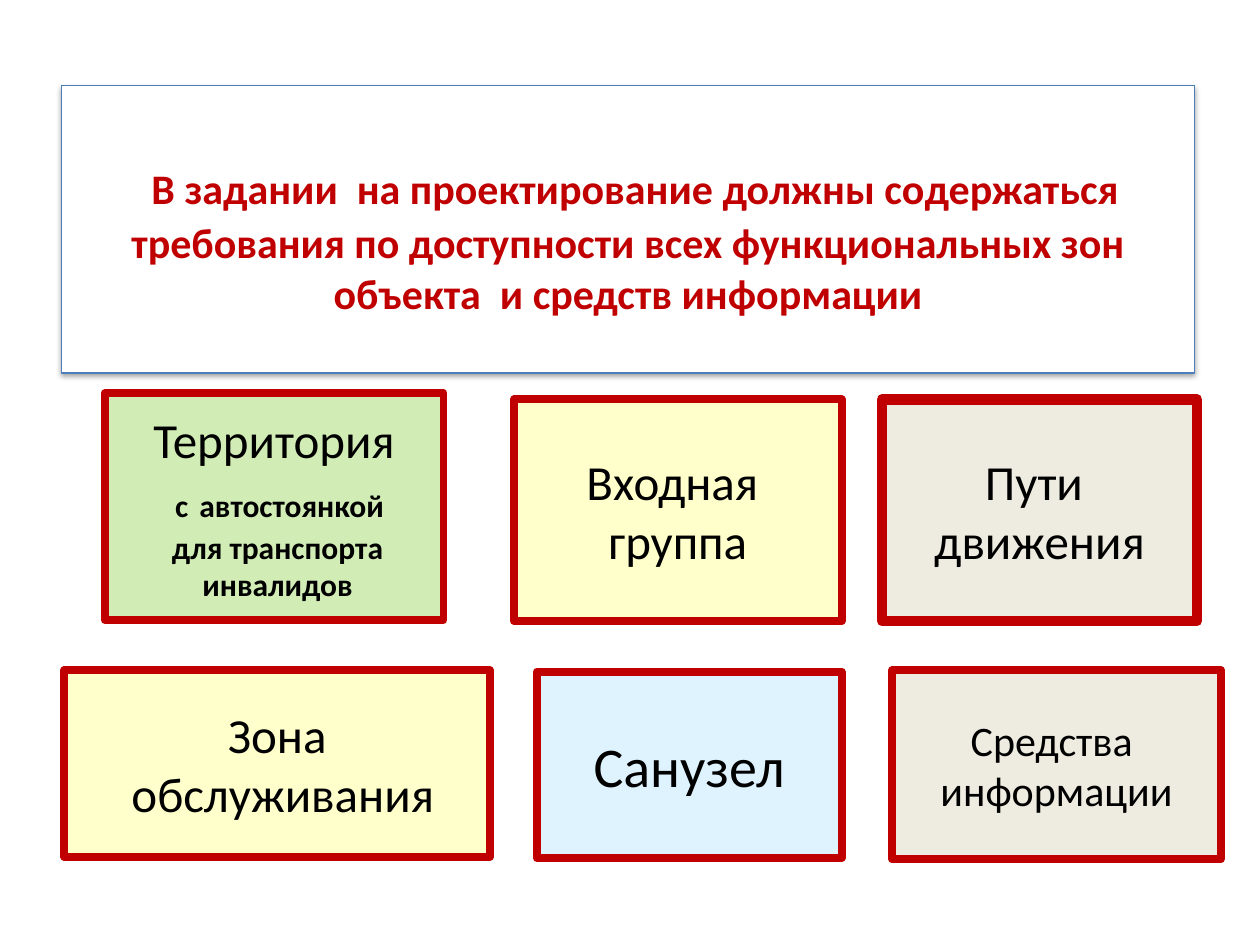
from dataclasses import dataclass

from lxml.etree import SubElement
from pptx import Presentation
from pptx.dml.color import RGBColor
from pptx.enum.shapes import MSO_SHAPE
from pptx.enum.text import MSO_ANCHOR, PP_ALIGN
from pptx.oxml.ns import qn
from pptx.util import Inches, Pt

COLORS = {
    "black": "000000",
    "white": "FFFFFF",
    "red": "C00000",
    "blue": "4B7EBC",
    "yellow": "FFFFCC",
    "beige": "EEECE1",
    "sky": "DEF3FE",
    "green": "D2ECB6",
}


@dataclass
class TextRun:
    text: str
    size: int
    bold: bool = False
    color: str = "black"


@dataclass
class Box:
    left: float
    top: float
    width: float
    height: float
    fill: str
    paragraphs: list[list[TextRun]]
    line: str = "red"
    line_width: float = 4.5
    wrap: bool = False


def lines(size: int, *texts: str) -> list[list[TextRun]]:
    return [[TextRun(text, size)] for text in texts]


TERRITORY = [
    [TextRun("Территория", 28)],
    [
        TextRun(" ", 28, True),
        TextRun("с", 18, True),
        TextRun(" ", 28, True),
        TextRun("автостоянкой", 18, True),
    ],
    [TextRun(" для транспорта", 18, True)],
    [TextRun(" инвалидов", 18, True)],
]

HEADING = [[
    TextRun(" ", 36, True),
    TextRun(
        "В задании  на проектирование должны содержаться требования по доступности "
        "всех функциональных зон объекта  и средств информации",
        24, True, "red",
    ),
]]

ZONES = [
    Box(4.08, 3.17, 2.6, 1.76, "yellow", lines(28, "Входная ", "группа")),
    Box(7, 3.17, 2.5, 1.76, "beige", lines(28, "Пути ", "движения"), line_width=6),
    Box(0.51, 5.32, 3.38, 1.48, "yellow", lines(28, "Зона", " обслуживания")),
    Box(4.26, 5.33, 2.42, 1.48, "sky", lines(32, "Санузел")),
    Box(7.08, 5.32, 2.61, 1.5, "beige", lines(24, "Средства ", "информации")),
    Box(0.83, 3.12, 2.69, 1.8, "green", TERRITORY),
]

TITLE = Box(0.49, 0.68, 8.99, 2.28, "white", HEADING, "blue", 0.75, True)


def rgb(name: str) -> RGBColor:
    return RGBColor.from_string(COLORS[name])


def draw_box(slide, box: Box):
    shape = slide.shapes.add_shape(
        MSO_SHAPE.RECTANGLE,
        Inches(box.left), Inches(box.top), Inches(box.width), Inches(box.height),
    )
    shape.shadow.inherit = False
    shape.fill.solid()
    shape.fill.fore_color.rgb = rgb(box.fill)
    shape.line.color.rgb = rgb(box.line)
    shape.line.width = Pt(box.line_width)
    frame = shape.text_frame
    frame.word_wrap = box.wrap
    frame.vertical_anchor = MSO_ANCHOR.MIDDLE
    for index, text_runs in enumerate(box.paragraphs):
        paragraph = frame.add_paragraph() if index else frame.paragraphs[0]
        paragraph.alignment = PP_ALIGN.CENTER
        for text_run in text_runs:
            run = paragraph.add_run()
            run.text = text_run.text
            run.font.name = "Calibri"
            run.font.size = Pt(text_run.size)
            run.font.bold = text_run.bold
            run.font.color.rgb = rgb(text_run.color)
    return shape


def add_shadow(shape) -> None:
    effects = shape._element.spPr.find(qn("a:effectLst"))
    shadow = SubElement(
        effects, qn("a:outerShdw"),
        blurRad=str(Pt(3.1)), dist=str(Pt(1.6)), dir="5400000", rotWithShape="0",
    )
    color = SubElement(shadow, qn("a:srgbClr"), val=COLORS["black"])
    SubElement(color, qn("a:alpha"), val="38000")


def main() -> None:
    presentation = Presentation()
    presentation.slide_width = Inches(10)
    presentation.slide_height = Inches(7.5)
    slide = presentation.slides.add_slide(presentation.slide_layouts[6])
    for zone in ZONES:
        draw_box(slide, zone)
    add_shadow(draw_box(slide, TITLE))
    presentation.save("out.pptx")


if __name__ == "__main__":
    main()
